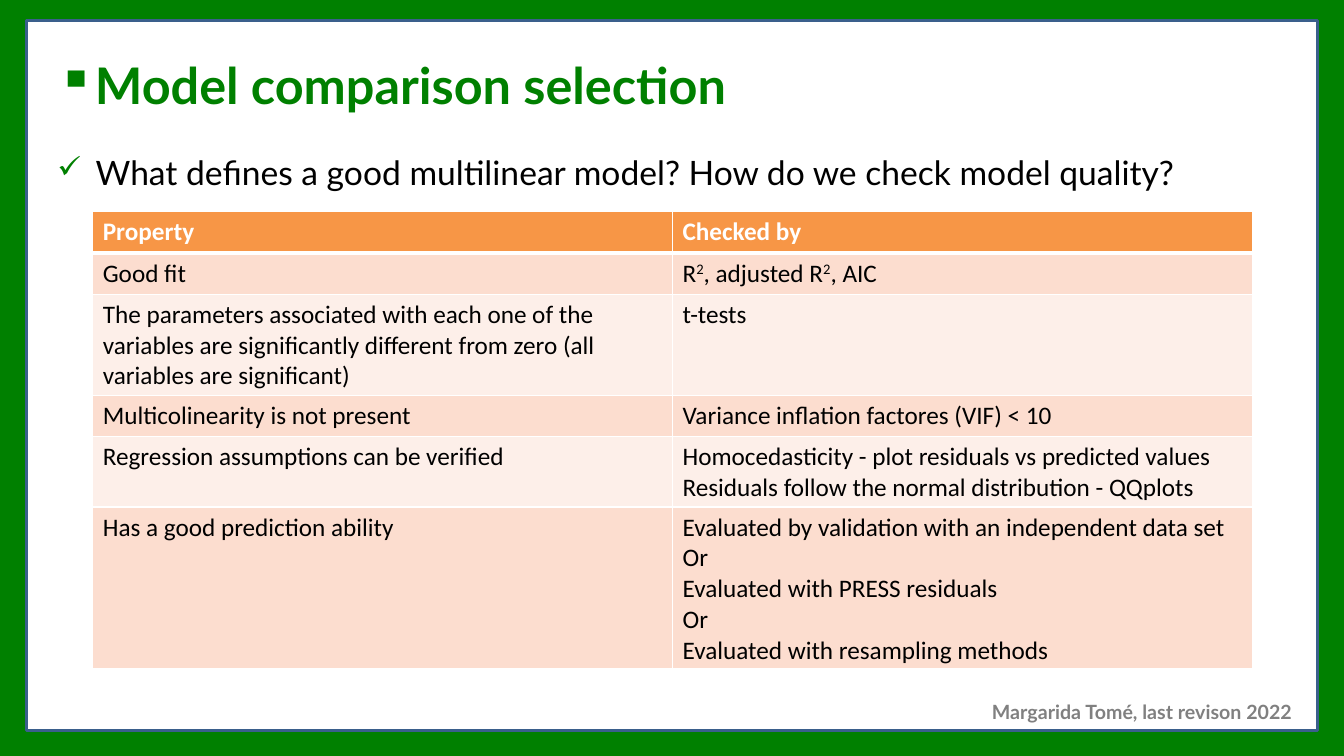
from lxml import etree
from pptx import Presentation
from pptx import util as u
from pptx.dml.color import RGBColor
from pptx.enum import shapes, text
from pptx.oxml.ns import qn

GREEN = RGBColor(0x00, 0x80, 0x00)
FRAME_BLUE = RGBColor(0x3A, 0x5F, 0x8C)
WHITE = RGBColor(0xFF, 0xFF, 0xFF)
BLACK = RGBColor(0x00, 0x00, 0x00)
GREY = RGBColor(0x80, 0x80, 0x80)
ORANGE = RGBColor(0xF7, 0x96, 0x46)
BAND_DARK = RGBColor(0xFC, 0xDD, 0xCF)
BAND_LIGHT = RGBColor(0xFD, 0xEF, 0xE9)

# Each line of a cell is a paragraph; ^ marks a superscript digit.
PROPERTIES = [
    ("Property", "Checked by"),
    ("Good fit", "R^2, adjusted R^2, AIC"),
    ("The parameters associated with each one of the variables are significantly "
     "different from zero (all variables are significant)", "t-tests"),
    ("Multicolinearity is not present", "Variance inflation factores (VIF) < 10"),
    ("Regression assumptions can be verified",
     "Homocedasticity - plot residuals vs predicted values\n"
     "Residuals follow the normal distribution - QQplots"),
    ("Has a good prediction ability",
     "Evaluated by validation with an independent data set\nOr\n"
     "Evaluated with PRESS residuals\nOr\nEvaluated with resampling methods"),
]


class SlideBuilder:
    heading_font = "Lato"
    table_font = "Calibri"

    def __init__(self, slide):
        self.shapes = slide.shapes

    def panel(self, box, fill, line):
        panel = self.shapes.add_shape(shapes.MSO_SHAPE.RECTANGLE, *map(u.Inches, box))
        panel.shadow.inherit = False
        panel.fill.solid()
        panel.fill.fore_color.rgb = fill
        panel.line.color.rgb = line
        panel.line.width = u.Pt(2)

    def style(self, paragraph, name, size, color, bold):
        font = paragraph.font
        font.name, font.size, font.bold = name, u.Pt(size), bold
        font.color.rgb = color

    def bullet(self, paragraph, char, percent, hanging):
        props = paragraph._p.get_or_add_pPr()
        props.set("marL", str(u.Inches(hanging)))
        props.set("indent", str(-u.Inches(hanging)))
        color = etree.SubElement(props, qn("a:buClr"))
        etree.SubElement(color, qn("a:srgbClr"), val=str(GREEN))
        etree.SubElement(props, qn("a:buSzPct"), val=str(percent * 1000))
        etree.SubElement(props, qn("a:buChar"), char=char)

    def label(self, box, wording, size, color, bold=False, bullet=None,
              anchor=text.MSO_ANCHOR.TOP, align=text.PP_ALIGN.LEFT, before=0):
        frame = self.shapes.add_textbox(*map(u.Inches, box)).text_frame
        frame.word_wrap = True
        frame.vertical_anchor = anchor
        paragraph = frame.paragraphs[0]
        paragraph.text = wording
        paragraph.alignment = align
        paragraph.space_before = u.Pt(before)
        if bullet:
            self.bullet(paragraph, *bullet)
        self.style(paragraph, self.heading_font, size, color, bold)

    def cell_borders(self, cell, widths):
        """Draw white borders; widths are points for left, right, top, bottom."""
        props = cell._tc.get_or_add_tcPr()
        for index, (side, width) in enumerate(zip("LRTB", widths)):
            border = etree.Element(qn(f"a:ln{side}"), w=str(u.Pt(width)))
            fill = etree.SubElement(border, qn("a:solidFill"))
            etree.SubElement(fill, qn("a:srgbClr"), val=str(WHITE))
            props.insert(index, border)

    def cell_text(self, cell, wording, color, bold):
        for number, line in enumerate(wording.split("\n")):
            frame = cell.text_frame
            paragraph = frame.add_paragraph() if number else frame.paragraphs[0]
            first, *rest = line.split("^")
            paragraph.add_run().text = first
            for part in rest:
                exponent = paragraph.add_run()
                exponent.text = part[0]
                exponent._r.get_or_add_rPr().set("baseline", "30000")
                paragraph.add_run().text = part[1:]
            self.style(paragraph, self.table_font, 18, color, bold)

    def table(self, left, top, column_width, row_height, rows):
        columns = len(rows[0])
        table = self.shapes.add_table(
            len(rows), columns, u.Inches(left), u.Inches(top),
            u.Inches(column_width * columns), u.Inches(row_height * len(rows))).table
        for r, row in enumerate(rows):
            header = r == 0
            for c, wording in enumerate(row):
                cell = table.cell(r, c)
                cell.fill.solid()
                band = BAND_DARK if r % 2 else BAND_LIGHT
                cell.fill.fore_color.rgb = ORANGE if header else band
                self.cell_borders(cell, (1, 1, 3 if r == 1 else 1, 3 if header else 1))
                self.cell_text(cell, wording, WHITE if header else BLACK, header)


def main():
    deck = Presentation()
    deck.slide_width, deck.slide_height = u.Inches(13.33), u.Inches(7.5)
    page = SlideBuilder(deck.slides.add_slide(deck.slide_layouts[6]))

    page.panel((0, 0, 13.33, 7.5), GREEN, GREEN)
    page.panel((0.26, 0.2, 12.81, 7.05), WHITE, FRAME_BLUE)
    page.label((9.74, 6.89, 4.04, 0.34), "Margarida Tomé, last revison 2022",
               14, GREY, bold=True)
    page.label((0.47, 0.44, 12.39, 0.79), "Model comparison selection", 36, GREEN,
               bold=True, bullet=("▪", 100, 0), anchor=text.MSO_ANCHOR.MIDDLE)
    page.label((0.47, 1.46, 12.39, 5.47),
               "What defines a good multilinear model? How do we check model quality?",
               24, BLACK, bullet=("✓", 90, 0.38), align=text.PP_ALIGN.JUSTIFY, before=12)
    page.table(0.92, 2.1, 5.75, 0.41, PROPERTIES)

    deck.save("out.pptx")


if __name__ == "__main__":
    main()
